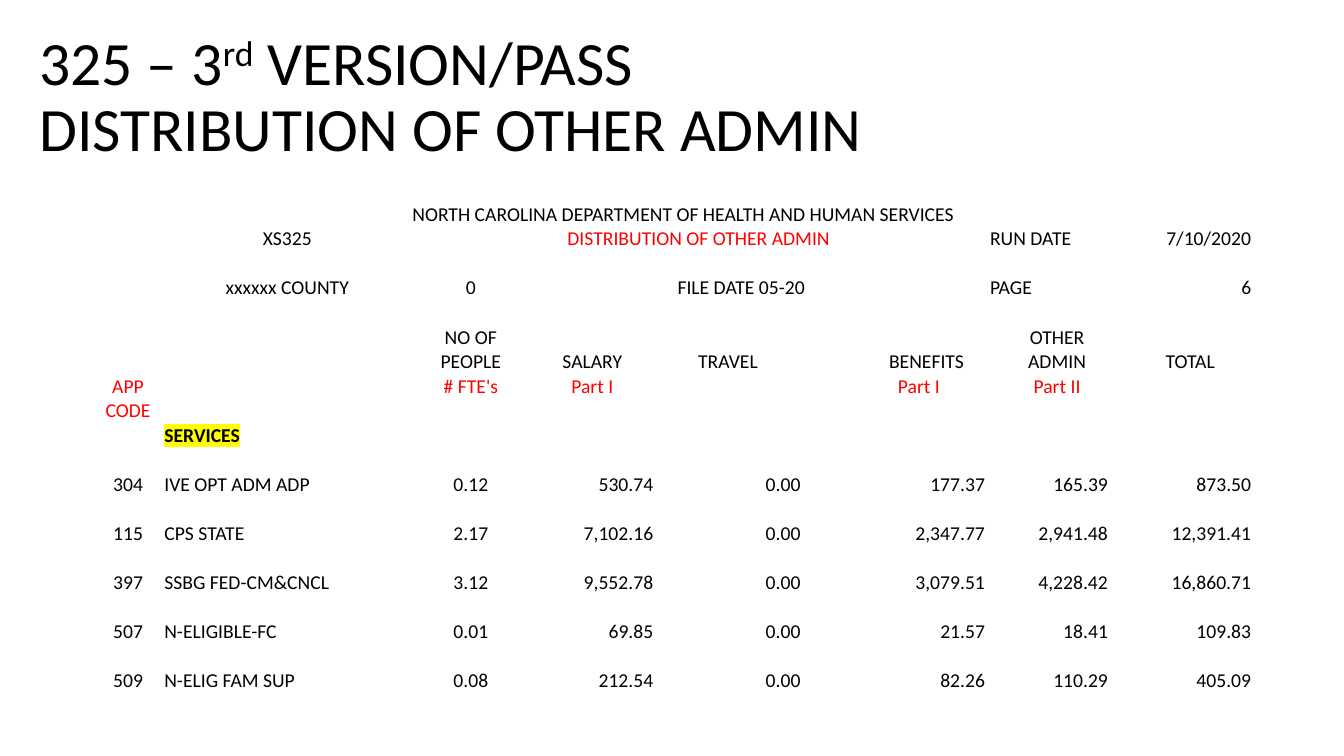
from dataclasses import dataclass
from itertools import product

from lxml.etree import SubElement
from pptx import Presentation
from pptx.dml.color import RGBColor
from pptx.enum.text import MSO_ANCHOR, PP_ALIGN
from pptx.oxml.ns import qn
from pptx.slide import Slide
from pptx.table import Table
from pptx.text.text import _Paragraph as Paragraph, _Run as Run
from pptx.util import Emu, Pt


@dataclass(frozen=True)
class Theme:
    font: str = "Calibri"
    black: str = "000000"
    red: str = "FF0000"
    yellow: str = "FFFF00"
    title_pt: int = 44
    body_pt: int = 14
    last_row_pt: int = 8


@dataclass(frozen=True)
class Entry:
    row: int
    col: int
    text: str
    align: PP_ALIGN = PP_ALIGN.CENTER
    color: str = Theme.black
    cols: int = 1
    left: int = 1
    right: int = 1
    marked: bool = False


THEME = Theme()
EMU_PER_PX = 9144
LEFT, CENTER, RIGHT = PP_ALIGN.LEFT, PP_ALIGN.CENTER, PP_ALIGN.RIGHT

COL_WIDTHS = [70, 246, 118, 123, 146, 183, 141, 123]
ROW_HEIGHTS = [21] * 21 + [16]

HEADINGS = [
    Entry(0, 2, "NORTH CAROLINA DEPARTMENT OF HEALTH AND HUMAN SERVICES", LEFT, cols=5),
    Entry(1, 1, "XS325"),
    Entry(1, 2, "DISTRIBUTION OF OTHER ADMIN", color=THEME.red, cols=4),
    Entry(1, 6, "RUN DATE", LEFT, left=4),
    Entry(1, 7, "7/10/2020", RIGHT),
    Entry(3, 1, "xxxxxx COUNTY"),
    Entry(3, 2, "0"),
    Entry(3, 4, "FILE DATE 05-20", LEFT, cols=2, left=23),
    Entry(3, 6, "PAGE", LEFT, left=4),
    Entry(3, 7, "6", RIGHT),
    Entry(5, 2, "NO OF"),
    Entry(5, 6, "OTHER"),
    Entry(6, 2, "PEOPLE"),
    Entry(6, 3, "SALARY"),
    Entry(6, 4, "TRAVEL"),
    Entry(6, 5, "BENEFITS", left=66),
    Entry(6, 6, "ADMIN"),
    Entry(6, 7, "TOTAL"),
    Entry(7, 0, "APP", color=THEME.red),
    Entry(7, 2, "# FTE's", color=THEME.red),
    Entry(7, 3, "Part I", color=THEME.red),
    Entry(7, 5, "Part I", color=THEME.red, left=51),
    Entry(7, 6, "Part II", color=THEME.red),
    Entry(8, 0, "CODE", color=THEME.red),
    Entry(9, 1, "SERVICES", LEFT, marked=True),
]

FIRST_SERVICE_ROW = 11
SERVICE_ALIGNS = [CENTER, LEFT, CENTER, RIGHT, RIGHT, RIGHT, RIGHT, RIGHT]
SERVICE_RIGHTS = [1, 1, 1, 1, 1, 1, 20, 1]
SERVICES = [
    ("304", "IVE OPT ADM ADP", "0.12", "530.74", "0.00", "177.37", "165.39", "873.50"),
    ("115", "CPS STATE", "2.17", "7,102.16", "0.00", "2,347.77", "2,941.48", "12,391.41"),
    ("397", "SSBG FED-CM&CNCL", "3.12", "9,552.78", "0.00", "3,079.51", "4,228.42", "16,860.71"),
    ("507", "N-ELIGIBLE-FC", "0.01", "69.85", "0.00", "21.57", "18.41", "109.83"),
    ("509", "N-ELIG FAM SUP", "0.08", "212.54", "0.00", "82.26", "110.29", "405.09"),
]


def px(n: int) -> Emu:
    return Emu(n * EMU_PER_PX)


def add_run(p: Paragraph, text: str, size: int, color: str = THEME.black,
            marked: bool = False) -> Run:
    r = p.add_run()
    r.text = text
    r.font.size = Pt(size)
    r.font.bold = marked
    r.font.color.rgb = RGBColor.from_string(color)
    if marked:
        highlight = SubElement(r.font._element, qn("a:highlight"))
        SubElement(highlight, qn("a:srgbClr"), val=THEME.yellow)
    r.font.name = THEME.font
    return r


def add_title(s: Slide) -> None:
    tf = s.shapes.add_textbox(px(29), px(25), px(1276), px(145)).text_frame
    tf.word_wrap = True
    tf.vertical_anchor = MSO_ANCHOR.MIDDLE
    p = tf.paragraphs[0]
    p.line_spacing = 0.9
    add_run(p, "325 – 3", THEME.title_pt)
    ordinal = add_run(p, "rd", THEME.title_pt)
    ordinal.font._element.set("baseline", "30000")
    add_run(p, " VERSION/PASS", THEME.title_pt)
    p.add_line_break()
    add_run(p, "DISTRIBUTION OF OTHER ADMIN", THEME.title_pt)


def add_grid(s: Slide) -> Table:
    frame = s.shapes.add_table(len(ROW_HEIGHTS), len(COL_WIDTHS),
                               px(92), px(200), px(sum(COL_WIDTHS)), px(536))
    table = frame.table
    table.first_row = table.horz_banding = False
    for column, width in zip(table.columns, COL_WIDTHS):
        column.width = px(width)
    for row, height in zip(table.rows, ROW_HEIGHTS):
        row.height = px(height)
    last = len(ROW_HEIGHTS) - 1
    for row, col in product(range(len(ROW_HEIGHTS)), range(len(COL_WIDTHS))):
        cell = table.cell(row, col)
        cell.fill.background()
        cell.vertical_anchor = MSO_ANCHOR.BOTTOM
        cell.margin_left = cell.margin_right = cell.margin_top = px(1)
        cell.margin_bottom = 0
        size = THEME.last_row_pt if row == last else THEME.body_pt
        end = cell.text_frame.paragraphs[0]._p.get_or_add_endParaRPr()
        end.set("sz", str(size * 100))
        SubElement(end, qn("a:latin"), typeface=THEME.font)
    return table


def fill_entry(table: Table, entry: Entry) -> None:
    cell = table.cell(entry.row, entry.col)
    if entry.cols > 1:
        cell.merge(table.cell(entry.row, entry.col + entry.cols - 1))
    cell.margin_left, cell.margin_right = px(entry.left), px(entry.right)
    p = cell.text_frame.paragraphs[0]
    p.alignment = entry.align
    add_run(p, entry.text, THEME.body_pt, entry.color, entry.marked)


def service_entries() -> list[Entry]:
    return [
        Entry(FIRST_SERVICE_ROW + 2 * i, col, text, SERVICE_ALIGNS[col],
              right=SERVICE_RIGHTS[col])
        for i, service in enumerate(SERVICES)
        for col, text in enumerate(service)
    ]


def main() -> None:
    prs = Presentation()
    prs.slide_width, prs.slide_height = px(1333), px(750)
    s = prs.slides.add_slide(prs.slide_layouts[6])
    add_title(s)
    table = add_grid(s)
    for entry in HEADINGS + service_entries():
        fill_entry(table, entry)
    prs.save("out.pptx")


if __name__ == "__main__":
    main()
